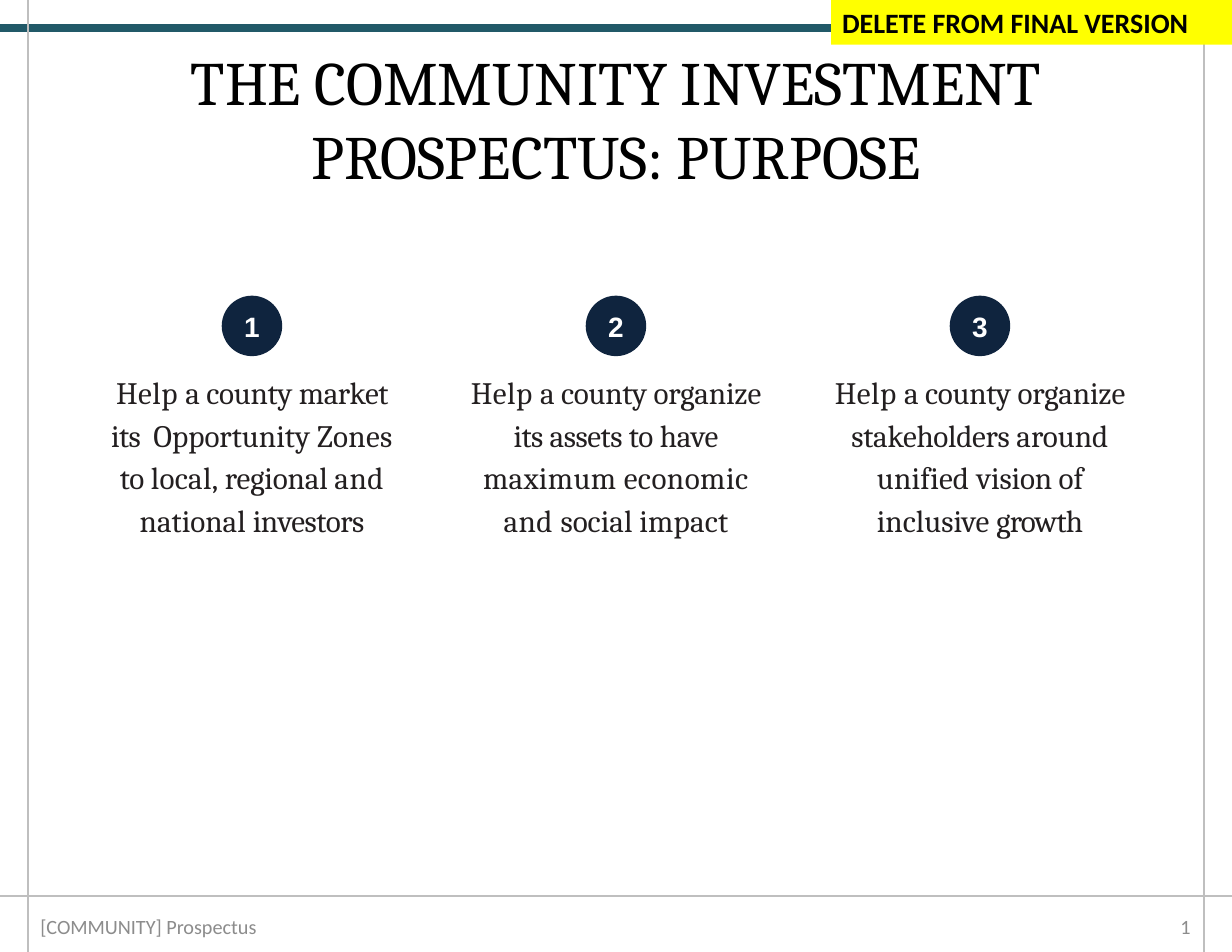
from lxml.etree import SubElement
from pptx import Presentation
from pptx.dml.color import RGBColor
from pptx.enum.shapes import MSO_CONNECTOR, MSO_SHAPE
from pptx.enum.text import MSO_ANCHOR, PP_ALIGN
from pptx.oxml.ns import qn
from pptx.util import Inches, Pt

BLACK = RGBColor(0x00, 0x00, 0x00)
WHITE = RGBColor(0xFF, 0xFF, 0xFF)
TEAL = RGBColor(0x21, 0x59, 0x68)
RULE_GRAY = RGBColor(0xBF, 0xBF, 0xBF)
FOOTER_GRAY = RGBColor(0x8C, 0x8C, 0x8C)
NAVY = RGBColor(0x0F, 0x24, 0x3E)
INK = RGBColor(0x23, 0x1F, 0x20)
YELLOW = RGBColor(0xFF, 0xFF, 0x00)

SLIDE_W, SLIDE_H = 11, 8.5
FIRST_CENTER, COLUMN_STEP = 2.25, 3.25
BADGE_SIZE, PURPOSE_W = 0.54, 2.73
FRAME_INSETS = (0.11, 0.06, 0.11, 0.06)
TIGHT_INSETS = (0, 0.01, 0, 0)

# Each purpose is a list of (text, letter spacing in points)
PURPOSES = [
    [("Help ", 0.3), ("a county ", -0.2), ("market ", -0.3), ("its  ", -0.4),
     ("Opportunity ", 0), ("Zones ", 0.2), ("to ", -0.2), ("local, ", 0.2),
     ("regional ", -0.1), ("and ", 0.3), ("national ", 0), ("investors", -0.3)],
    [("Help ", 0.3), ("a county ", -0.2), ("organize ", -0.1), ("its ", -0.4),
     ("assets ", -0.3), ("to ", -0.2), ("have ", -0.1), ("maximum ", 0.2),
     ("economic and ", 0.3), ("social ", 0), ("impact", 0.1)],
    [("Help ", 0.3), ("a county ", -0.2), ("organize ", -0.1),
     ("stakeholders ", -0.2), ("around ", 0), ("unified ", 0.1),
     ("vision of ", -0.1), ("inclusive ", 0), ("growth", -0.5)],
]


def add_rule(slide, x1, y1, x2, y2, color, width):
    rule = slide.shapes.add_connector(
        MSO_CONNECTOR.STRAIGHT, Inches(x1), Inches(y1), Inches(x2), Inches(y2))
    rule.line.color.rgb = color
    rule.line.width = Pt(width)
    SubElement(rule._element.spPr, qn("a:effectLst"))


def write_text(shape, runs, font, size, color, align=PP_ALIGN.LEFT,
               anchor=MSO_ANCHOR.MIDDLE, insets=FRAME_INSETS, bold=False):
    frame = shape.text_frame
    frame.word_wrap = True
    frame.vertical_anchor = anchor
    (frame.margin_left, frame.margin_top,
     frame.margin_right, frame.margin_bottom) = map(Inches, insets)
    paragraph = frame.paragraphs[0]
    paragraph.alignment = align
    for text, spacing in runs:
        run = paragraph.add_run()
        run.text = text
        run.font.name = font
        run.font.size = Pt(size)
        run.font.bold = bold
        run.font.color.rgb = color
        if spacing:
            run._r.get_or_add_rPr().set("spc", str(round(spacing * 100)))
    return paragraph


def add_text(slide, left, top, width, height, runs, *style, **options):
    box = slide.shapes.add_textbox(
        Inches(left), Inches(top), Inches(width), Inches(height))
    return write_text(box, runs, *style, **options)


def add_filled(slide, kind, left, top, width, height, fill):
    shape = slide.shapes.add_shape(
        kind, Inches(left), Inches(top), Inches(width), Inches(height))
    shape.shadow.inherit = False
    shape.fill.solid()
    shape.fill.fore_color.rgb = fill
    shape.line.fill.background()
    return shape


def add_purpose(slide, number, center, runs):
    badge = add_filled(slide, MSO_SHAPE.OVAL, center - BADGE_SIZE / 2, 2.64,
                       BADGE_SIZE, BADGE_SIZE, NAVY)
    write_text(badge, [(str(number), 0)], "Arial", 18, WHITE,
               align=PP_ALIGN.CENTER, insets=TIGHT_INSETS, bold=True)
    purpose = add_text(slide, center - PURPOSE_W / 2, 3.28, PURPOSE_W, 1.52,
                       runs, "Cambria", 20, INK, align=PP_ALIGN.CENTER,
                       anchor=MSO_ANCHOR.TOP, insets=TIGHT_INSETS)
    purpose.line_spacing = 1.14
    purpose.space_before = Pt(1)


def main():
    prs = Presentation()
    prs.slide_width, prs.slide_height = Inches(SLIDE_W), Inches(SLIDE_H)
    slide = prs.slides.add_slide(prs.slide_layouts[6])

    # Page frame
    add_rule(slide, 0, 0.25, SLIDE_W, 0.25, TEAL, 5)
    add_rule(slide, 0, 8, SLIDE_W, 8, RULE_GRAY, 1)
    for x in (0.25, SLIDE_W - 0.25):
        add_rule(slide, x, 0, x, SLIDE_H, RULE_GRAY, 1)

    # Title
    add_text(slide, 0.55, 0.34, 9.9, 1.42,
             [("THE COMMUNITY INVESTMENT PROSPECTUS: PURPOSE", 0)],
             "Cambria", 39.6, BLACK, align=PP_ALIGN.CENTER)

    # Footer
    add_text(slide, 0.25, 8.05, 3.48, 0.45, [("[COMMUNITY] Prospectus", 0)],
             "Calibri", 13, FOOTER_GRAY)
    add_text(slide, 8.17, 8.05, 2.57, 0.45, [("1", 0)],
             "Calibri", 13, FOOTER_GRAY, align=PP_ALIGN.RIGHT)

    # Three numbered purposes
    for index, runs in enumerate(PURPOSES):
        add_purpose(slide, index + 1, FIRST_CENTER + index * COLUMN_STEP, runs)

    # Draft banner
    banner = add_filled(slide, MSO_SHAPE.RECTANGLE, 7.42, 0, 3.58, 0.4, YELLOW)
    write_text(banner, [("DELETE FROM FINAL VERSION", 0)], "Calibri", 18, BLACK,
               anchor=MSO_ANCHOR.TOP, insets=(0.1, 0.05, 0.1, 0.05), bold=True)

    prs.save("out.pptx")


if __name__ == "__main__":
    main()
